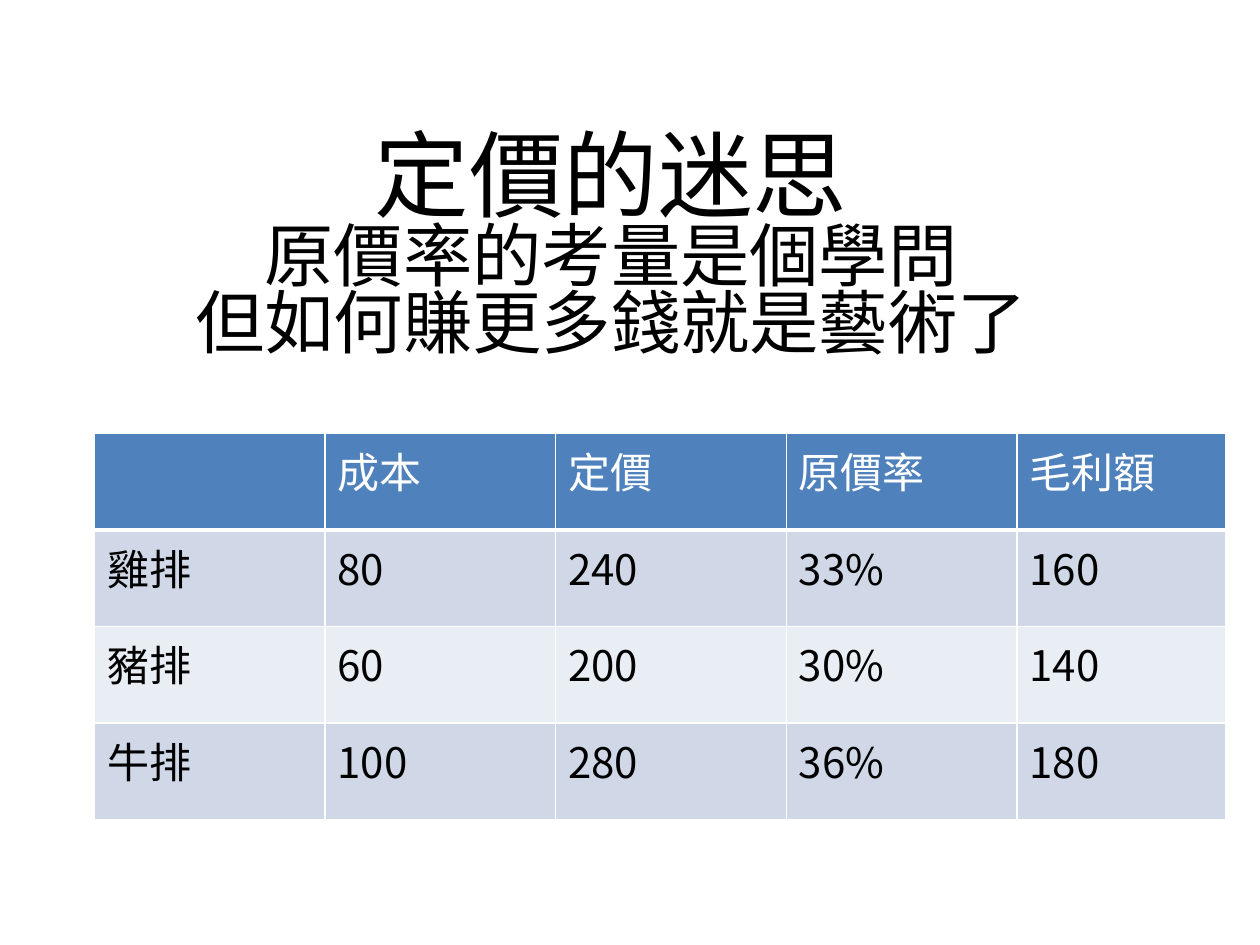
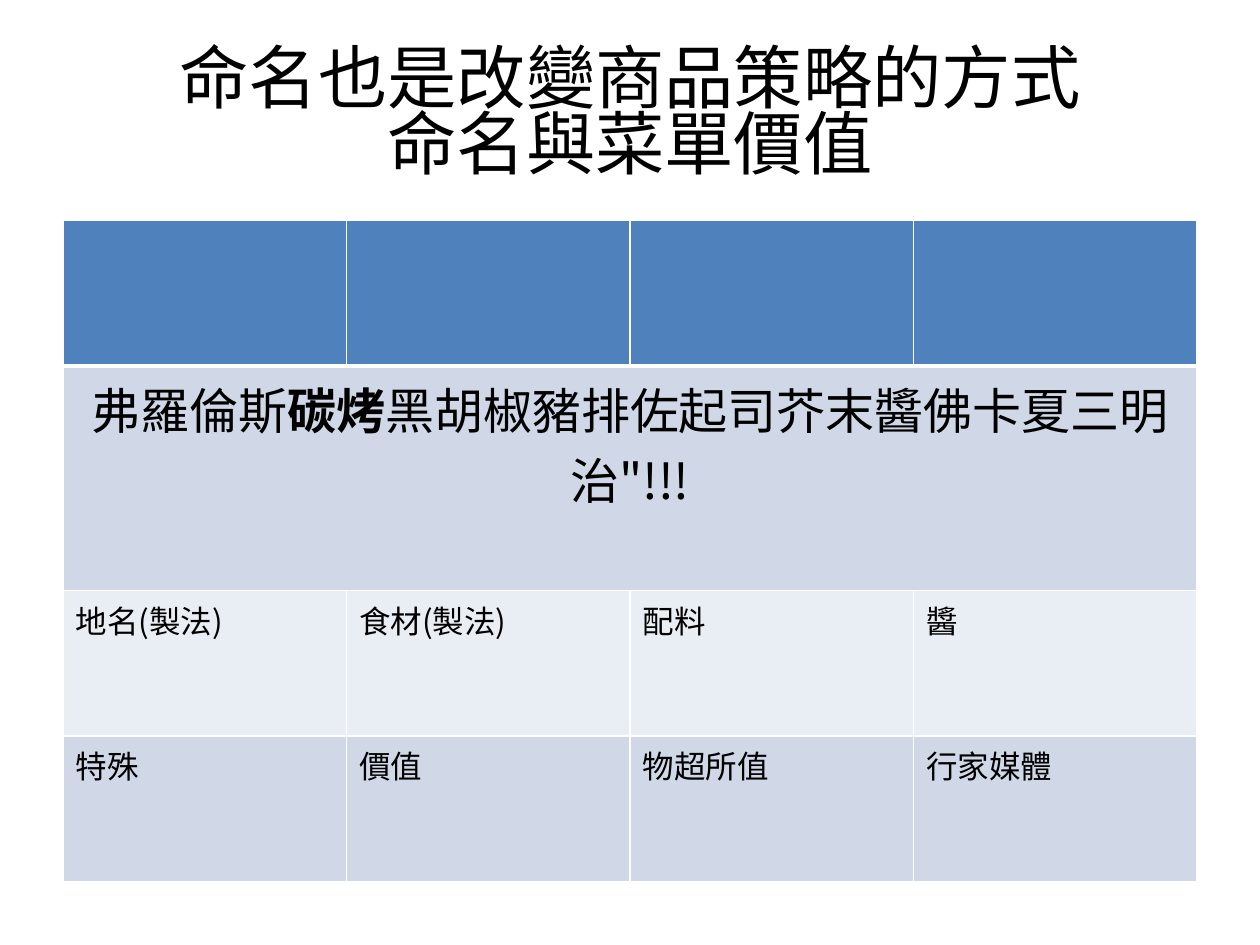
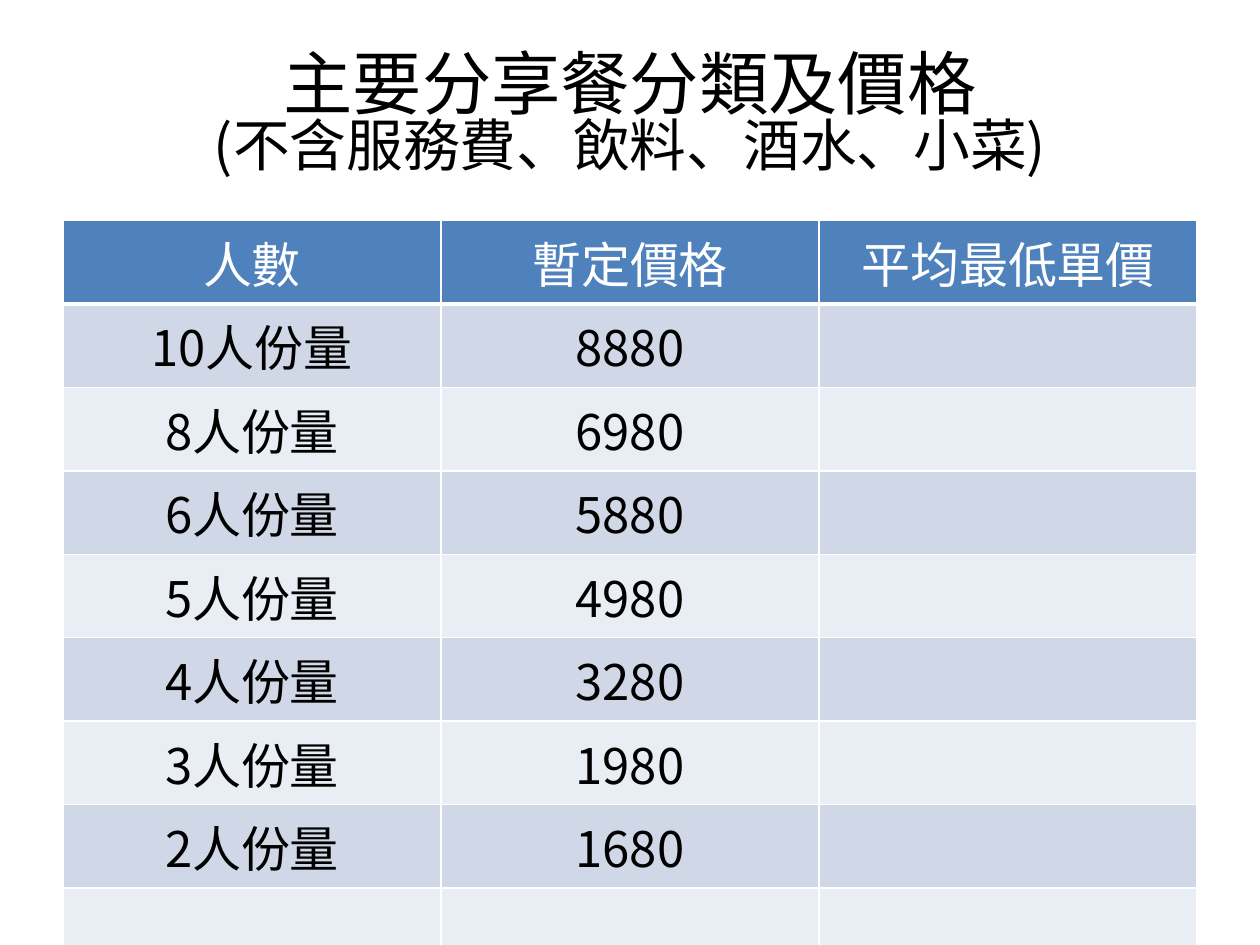
import lxml.etree
import pptx
import pptx.dml.color
import pptx.enum.text
import pptx.oxml.ns
import pptx.util

Pt = pptx.util.Pt
RGBColor = pptx.dml.color.RGBColor
PP_ALIGN = pptx.enum.text.PP_ALIGN
MSO_ANCHOR = pptx.enum.text.MSO_ANCHOR
qn = pptx.oxml.ns.qn

FONT = "Noto Sans CJK SC"
BLACK = RGBColor(0x00, 0x00, 0x00)
WHITE = RGBColor(0xFF, 0xFF, 0xFF)
HEADER_BLUE = RGBColor(0x4F, 0x81, 0xBD)
BANDS = (RGBColor(0xE9, 0xED, 0xF4), RGBColor(0xD0, 0xD8, 0xE8))

TITLE_SIZE = 39.6
TITLE_WIDTH, TITLE_HEIGHT = 648, 90
TABLE_LEFT, TABLE_TOP, TABLE_WIDTH = 36, 126, 648


def format_run(run, size, color, bold=False):
    run.font.name = FONT
    run.font.size = Pt(size)
    run.font.bold = bold
    run.font.color.rgb = color
    properties = run.font._element
    east_asian = lxml.etree.Element(qn("a:ea"), typeface=FONT)
    properties.find(qn("a:latin")).addnext(east_asian)


def add_title(slide, lines, left=36, top=21.6, anchor=MSO_ANCHOR.MIDDLE, bottom_margin=3.6):
    """Add a centred title; lines holds (text, size) pairs."""
    shape = slide.shapes.add_textbox(Pt(left), Pt(top), Pt(TITLE_WIDTH), Pt(TITLE_HEIGHT))
    text_frame = shape.text_frame
    text_frame.word_wrap = True
    text_frame.vertical_anchor = anchor
    text_frame.margin_bottom = Pt(bottom_margin)
    paragraph = text_frame.paragraphs[0]
    paragraph.text = "\v".join(text for text, size in lines)
    paragraph.alignment = PP_ALIGN.CENTER
    paragraph.line_spacing = 0.8
    for run, (text, size) in zip(paragraph.runs, lines):
        format_run(run, size, BLACK)


def set_borders(cell, bottom_width):
    properties = cell._tc.get_or_add_tcPr()
    for side, width in (("L", 1), ("R", 1), ("T", 1), ("B", bottom_width)):
        line = lxml.etree.SubElement(properties, qn("a:ln" + side), w=str(Pt(width)))
        fill = lxml.etree.SubElement(line, qn("a:solidFill"))
        lxml.etree.SubElement(fill, qn("a:srgbClr"), val=str(WHITE))


def fill_cell(cell, text, size, color, alignment):
    paragraph = cell.text_frame.paragraphs[0]
    paragraph.text = text
    paragraph.alignment = alignment
    for run in paragraph.runs:
        format_run(run, size, color)


def add_banded_table(slide, rows, column_widths, row_heights, size,
                     left=TABLE_LEFT, top=TABLE_TOP, alignment=PP_ALIGN.LEFT):
    """Add a table with a blue header row and alternating bands."""
    frame = slide.shapes.add_table(
        len(rows), len(column_widths), Pt(left), Pt(top),
        Pt(sum(column_widths)), Pt(sum(row_heights)))
    table = frame.table
    for column, width in zip(table.columns, column_widths):
        column.width = Pt(width)
    for row_index, values in enumerate(rows):
        table.rows[row_index].height = Pt(row_heights[row_index])
        is_header = row_index == 0
        for column_index, text in enumerate(values):
            cell = table.cell(row_index, column_index)
            set_borders(cell, 3 if is_header else 1)
            cell.fill.solid()
            cell.fill.fore_color.rgb = HEADER_BLUE if is_header else BANDS[row_index % 2]
            fill_cell(cell, text, size, WHITE if is_header else BLACK, alignment)
    return table


def add_pricing_slide(slide):
    add_title(slide, [("定價的迷思", 54),
                      ("原價率的考量是個學問", TITLE_SIZE),
                      ("但如何賺更多錢就是藝術了", TITLE_SIZE)],
              left=25.2, top=128.2, anchor=MSO_ANCHOR.BOTTOM, bottom_margin=11.5)
    rows = [("", "成本", "定價", "原價率", "毛利額"),
            ("雞排", "80", "240", "33%", "160"),
            ("豬排", "60", "200", "30%", "140"),
            ("牛排", "100", "280", "36%", "180")]
    add_banded_table(slide, rows, [131.8] * 4 + [119.5], [55.2] * 4, 24, left=54, top=247.7)


def add_naming_slide(slide):
    add_title(slide, [("命名也是改變商品策略的方式", TITLE_SIZE),
                      ("命名與菜單價值", TITLE_SIZE)])
    rows = [[""] * 4,
            [""] * 4,
            ("地名(製法)", "食材(製法)", "配料", "醬"),
            ("特殊", "價值", "物超所值", "行家媒體")]
    table = add_banded_table(slide, rows, [TABLE_WIDTH / 4] * 4, [83.2, 128.2, 83.2, 83.2], 18)
    dish = table.cell(1, 0)
    dish.merge(table.cell(1, 3))
    paragraph = dish.text_frame.paragraphs[0]
    paragraph.alignment = PP_ALIGN.CENTER
    for text, bold in (("弗羅倫斯", False), ("碳烤", True),
                       ("黑胡椒豬排佐起司芥末醬佛卡夏三明治\"!!!", False)):
        run = paragraph.add_run()
        run.text = text
        format_run(run, 28, BLACK, bold)


def add_sharing_menu_slide(slide):
    add_title(slide, [("主要分享餐分類及價格", TITLE_SIZE),
                      ("(不含服務費、飲料、酒水、小菜)", 32.4)])
    prices = {10: 8880, 8: 6980, 6: 5880, 5: 4980, 4: 3280, 3: 1980, 2: 1680}
    rows = [("人數", "暫定價格", "平均最低單價")]
    rows += [(f"{people}人份量", str(price), "") for people, price in prices.items()]
    rows.append(("", "", ""))
    add_banded_table(slide, rows, [TABLE_WIDTH / 3] * 3, [47.7] * len(rows), 28,
                     alignment=PP_ALIGN.CENTER)


def main():
    presentation = pptx.Presentation()
    presentation.slide_width = Pt(720)
    presentation.slide_height = Pt(540)
    blank_layout = presentation.slide_layouts[6]
    for build in (add_pricing_slide, add_naming_slide, add_sharing_menu_slide):
        build(presentation.slides.add_slide(blank_layout))
    presentation.save("out.pptx")


if __name__ == "__main__":
    main()
